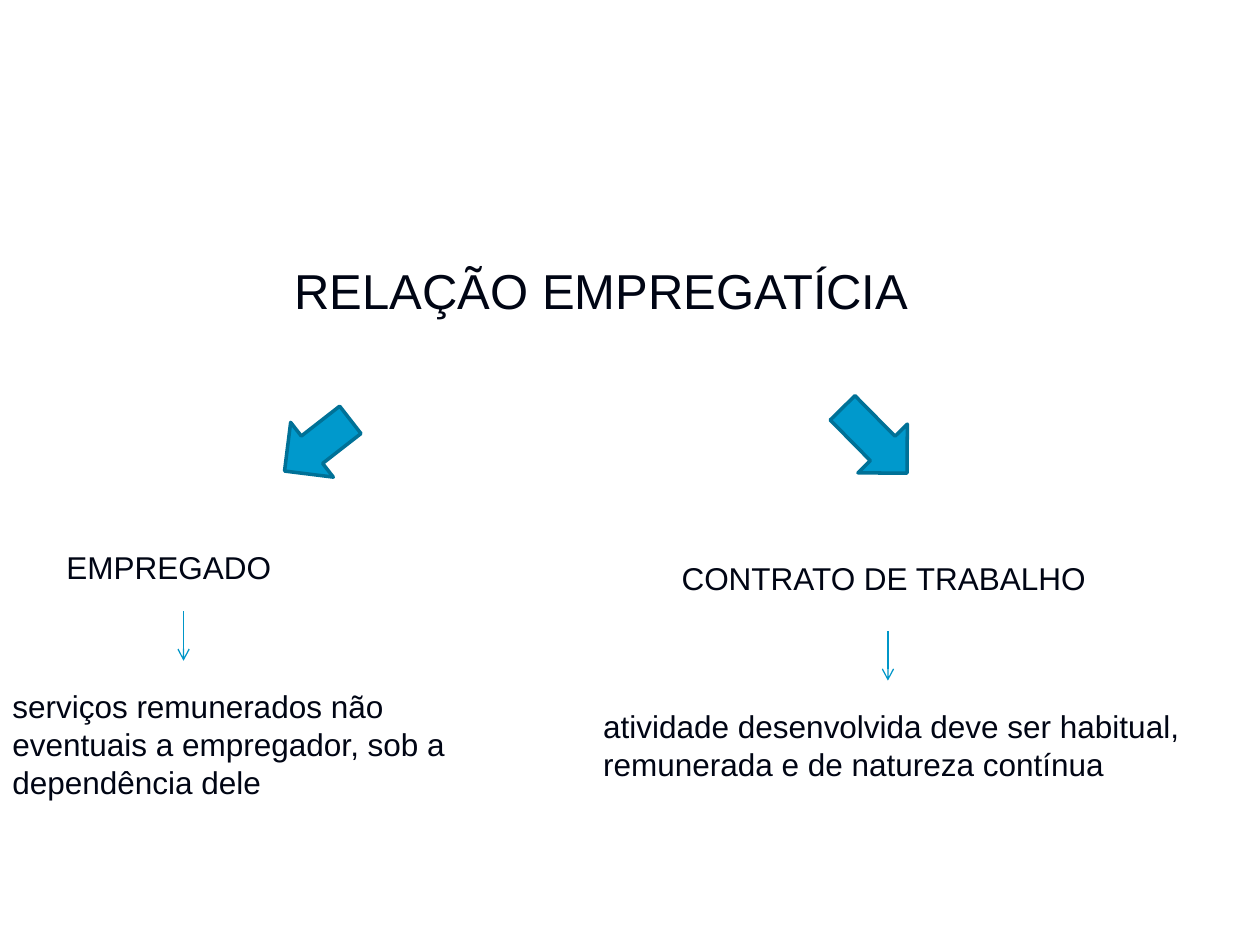
from dataclasses import dataclass

from lxml import etree
from pptx import Presentation
from pptx.dml.color import RGBColor
from pptx.enum.shapes import MSO_CONNECTOR, MSO_SHAPE
from pptx.enum.text import MSO_ANCHOR, MSO_AUTO_SIZE, PP_ALIGN
from pptx.oxml.ns import qn
from pptx.util import Cm, Pt

LEFT_ARROW = MSO_SHAPE.LEFT_ARROW
STRAIGHT = MSO_CONNECTOR.STRAIGHT
TOP = MSO_ANCHOR.TOP
NO_FIT = MSO_AUTO_SIZE.NONE
LEFT = PP_ALIGN.LEFT


@dataclass(frozen=True)
class Theme:
    font: str = "Arial"
    paper: RGBColor = RGBColor(0xFF, 0xFF, 0xFF)
    ink: RGBColor = RGBColor(0x00, 0x05, 0x14)
    arrow: RGBColor = RGBColor(0x00, 0x99, 0xCC)
    outline: RGBColor = RGBColor(0x00, 0x71, 0x97)
    link: RGBColor = RGBColor(0x00, 0x96, 0xC8)
    title: Pt = Pt(28)
    body: Pt = Pt(18)


THEME = Theme()
FRAME_FORMAT = {
    "word_wrap": True,
    "auto_size": NO_FIT,
    "vertical_anchor": TOP,
    "margin_left": Cm(0.25),
    "margin_right": Cm(0.25),
    "margin_top": Cm(0.13),
    "margin_bottom": Cm(0.13),
}


def apply_format(target, values):
    for name, value in values.items():
        setattr(target, name, value)


def write_text(box, text, size):
    frame = box.text_frame
    apply_format(frame, FRAME_FORMAT)
    para = frame.paragraphs[0]
    para.alignment = LEFT
    span = para.add_run()
    span.text = text
    apply_format(span.font, {"name": THEME.font, "size": size})
    span.font.color.rgb = THEME.ink


def add_title(page, text, left, top, width, height):
    title = page.shapes.title
    place = {"left": left, "top": top, "width": width, "height": height}
    apply_format(title, {name: Cm(value) for name, value in place.items()})
    write_text(title, text, THEME.title)


def add_label(page, text, left, top, width, height):
    box = page.shapes.add_textbox(Cm(left), Cm(top), Cm(width), Cm(height))
    write_text(box, text, THEME.body)


def add_block_arrow(page, left, top, width, height, rotation):
    arrow = page.shapes.add_shape(
        LEFT_ARROW, Cm(left), Cm(top), Cm(width), Cm(height)
    )
    arrow.rotation = rotation
    arrow.shadow.inherit = False
    arrow.fill.solid()
    arrow.fill.fore_color.rgb = THEME.arrow
    arrow.line.color.rgb = THEME.outline
    arrow.line.width = Pt(2)


def add_down_link(page, x, top, length):
    link = page.shapes.add_connector(
        STRAIGHT, Cm(x), Cm(top), Cm(x), Cm(top + length)
    )
    link.line.color.rgb = THEME.link
    link.line.width = Pt(0.75)
    etree.SubElement(link.line._get_or_add_ln(), qn("a:tailEnd"), type="arrow")
    etree.SubElement(link._element.spPr, qn("a:effectLst"))


def main():
    deck = Presentation()
    deck.slide_width, deck.slide_height = Cm(25.4), Cm(19.05)
    page = deck.slides.add_slide(deck.slide_layouts[5])
    page.background.fill.solid()
    page.background.fill.fore_color.rgb = THEME.paper

    add_title(page, "RELAÇÃO EMPREGATÍCIA", 5.69, 5.13, 13, 1.45)
    add_label(page, "EMPREGADO", 1.09, 10.92, 10, 1.02)
    add_label(page, "CONTRATO DE TRABALHO", 13.49, 11.13, 10, 1.02)
    add_block_arrow(page, 5.56, 8.28, 1.68, 1.4, 322.1)
    add_block_arrow(page, 16.71, 8.18, 1.85, 1.4, 225.4)
    add_label(
        page,
        "serviços remunerados não eventuais a empregador, sob a dependência dele",
        0, 13.72, 10, 2.57,
    )
    add_label(
        page,
        "atividade desenvolvida deve ser habitual, remunerada e de natureza contínua",
        11.91, 14.12, 12.7, 1.8,
    )
    for x, top in ((3.7, 12.32), (17.9, 12.72)):
        add_down_link(page, x, top, 1)

    deck.save("out.pptx")


if __name__ == "__main__":
    main()
